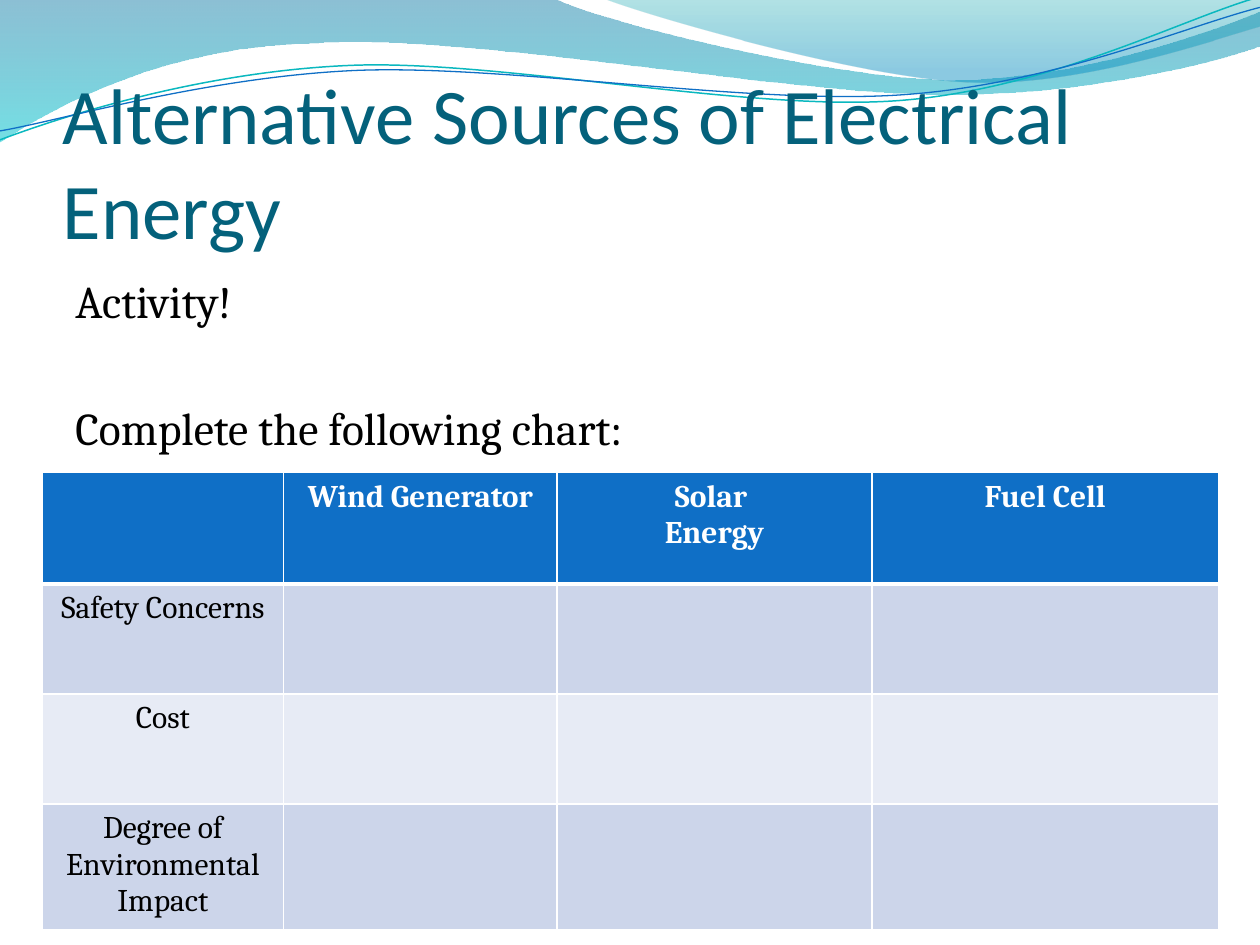
from lxml import etree
from pptx import Presentation
from pptx.dml.color import RGBColor
from pptx.enum.text import MSO_ANCHOR, PP_ALIGN
from pptx.oxml.ns import qn
from pptx.util import Cm, Pt

BOTTOM = MSO_ANCHOR.BOTTOM
TOP = MSO_ANCHOR.TOP
CENTER = PP_ALIGN.CENTER

BAND = [
    (0, 0), (11.18, -0.03),
    (12.09, 0.43, 16.87, 1.6, 19.25, 1.6),
    (21.67, 1.6, 24.33, 0.66, 25.4, 0.23),
    (25.43, 0.91),
    (24.97, 1.12, 22.1, 1.93, 18.95, 1.9),
    (15.8, 1.9, 9.7, 0.71, 6.53, 0.86),
    (3.28, 0.91, 1.17, 2.11, -0.03, 2.87),
    (0, 0),
]
CREST = [
    (12.17, -0.03),
    (12.93, 0.28, 17.32, 1.57, 19.53, 1.65),
    (21.74, 1.75, 24.41, 0.81, 25.4, 0.53),
    (25.4, 0), (12.17, -0.03),
]
TEAL = [
    (0, 2.82),
    (1.22, 2.36, 4.01, 1.45, 7.04, 1.32),
    (10.03, 1.19, 15.06, 2.26, 18.11, 2.03),
    (21.16, 1.8, 23.83, 0.38, 25.35, -0.05),
]
BLUE = [
    (0, 2.64),
    (1.19, 2.44, 4.17, 1.55, 7.19, 1.42),
    (10.24, 1.3, 15.16, 2.13, 18.21, 1.91),
    (21.23, 1.7, 23.9, 0.53, 25.4, 0.15),
]

COLS = [4.87, 5.51, 6.35, 6.98]
ROWS = [2.24, 2.22, 2.22, 2.22]
HEADS = ["", "Wind Generator", "Solar \nEnergy", "Fuel Cell"]
SIDES = ["Safety Concerns", "Cost", "Degree of Environmental Impact"]


def color(code):
    return RGBColor.from_string(code)


def add_curve(slide, path, closed):
    points = [(Cm(x), Cm(y)) for step in path
              for x, y in zip(step[::2], step[1::2])]
    draft = slide.shapes.build_freeform(*points[0])
    draft.add_line_segments(points[1:], close=closed)
    shape = draft.convert_to_shape()
    shape.shadow.inherit = False
    lines = iter(list(shape._element.iter(qn("a:lnTo"))))
    for step in path[1:]:
        first = next(lines)
        if len(step) == 6:
            curve = etree.Element(qn("a:cubicBezTo"))
            first.addprevious(curve)
            for line in (first, next(lines), next(lines)):
                curve.append(line[0])
                line.getparent().remove(line)
    return shape


def add_wave(slide, path, stops):
    shape = add_curve(slide, path, True)
    shape.line.fill.background()
    shape.fill.gradient()
    shape.fill.gradient_angle = 270
    for stop, (place, code, _) in zip(shape.fill.gradient_stops, stops):
        stop.position = place
        stop.color.rgb = color(code)
    tints = shape._element.spPr.iter(qn("a:srgbClr"))
    for tint, (_, _, alpha) in zip(tints, stops):
        etree.SubElement(tint, qn("a:alpha"), val=str(alpha * 1000))


def add_line(slide, path, code, width):
    shape = add_curve(slide, path, False)
    shape.fill.background()
    shape.line.color.rgb = color(code)
    shape.line.width = Pt(width)


def style(para, face, size, code, bold=False):
    for run in para.runs:
        run.font.name = face
        run.font.size = Pt(size)
        run.font.color.rgb = color(code)
        run.font.bold = bold


def add_text(slide, box, text, face, size, code, anchor, inset):
    frame = slide.shapes.add_textbox(*map(Cm, box)).text_frame
    frame.word_wrap = True
    frame.vertical_anchor = anchor
    frame.margin_left = frame.margin_right = Cm(inset)
    frame.text = text
    for para in frame.paragraphs:
        style(para, face, size, code)
    return frame


def add_edge(cell, index, side, width):
    line = etree.Element(qn("a:ln" + side), w=str(Pt(width)))
    fill = etree.SubElement(line, qn("a:solidFill"))
    etree.SubElement(fill, qn("a:srgbClr"), val="FFFFFF")
    cell._tc.get_or_add_tcPr().insert(index, line)


def fill_cell(cell, row, text):
    head = row == 0
    cell.fill.solid()
    fill = "0F6FC6" if head else ("E7EBF5", "CCD5EA")[row % 2]
    cell.fill.fore_color.rgb = color(fill)
    widths = {"L": 1, "R": 1, "T": 3 if row == 1 else 1, "B": 3 if head else 1}
    for index, (side, width) in enumerate(widths.items()):
        add_edge(cell, index, side, width)
    if not text:
        return
    cell.text_frame.text = text
    for para in cell.text_frame.paragraphs:
        para.alignment = CENTER
        style(para, "Cambria", 18, "FFFFFF" if head else "000000", head)


def add_grid(slide):
    rows = [HEADS] + [[side, "", "", ""] for side in SIDES]
    table = slide.shapes.add_table(
        len(ROWS), len(COLS), Cm(0.85), Cm(9.53),
        Cm(sum(COLS)), Cm(sum(ROWS))).table
    for col, width in zip(table.columns, COLS):
        col.width = Cm(width)
    for r, texts in enumerate(rows):
        table.rows[r].height = Cm(ROWS[r])
        for c, text in enumerate(texts):
            fill_cell(table.cell(r, c), r, text)


def main():
    deck = Presentation()
    deck.slide_width = Cm(25.4)
    deck.slide_height = Cm(19.05)
    slide = deck.slides.add_slide(deck.slide_layouts[6])
    add_wave(slide, BAND, [(0, "0074A1", 45), (1, "00C6CF", 55)])
    add_wave(slide, CREST, [(0, "00A1A9", 30), (0.8, "008BBF", 45)])
    add_line(slide, TEAL, "0AB8BF", 0.85)
    add_line(slide, BLUE, "0F6FC6", 0.75)
    title = add_text(slide, (1.27, 1.96, 22.86, 3.18),
                     "Alternative Sources of Electrical Energy",
                     "Calibri", 45, "04617B", BOTTOM, 0)
    title.margin_bottom = 0
    body = add_text(slide, (1.27, 5.38, 22.86, 12.19),
                    "Activity!\nComplete the following chart:",
                    "Cambria", 26, "000000", TOP, 0.25)
    for para, gap in zip(body.paragraphs, (3, 41.5)):
        para.space_before = Pt(gap)
    add_grid(slide)
    deck.save("out.pptx")


if __name__ == "__main__":
    main()
